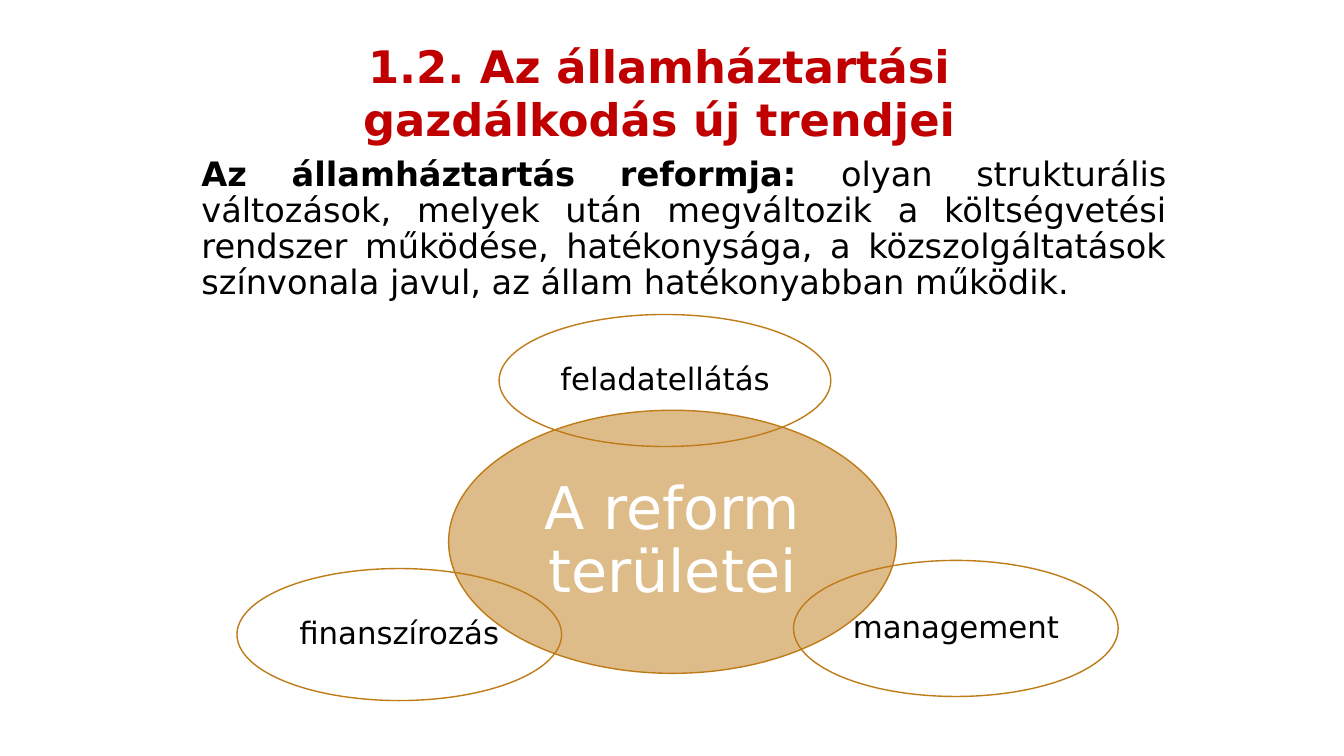
from lxml import etree
from pptx import Presentation
from pptx.dml.color import RGBColor
from pptx.enum.shapes import MSO_SHAPE
from pptx.enum.text import MSO_ANCHOR, MSO_AUTO_SIZE, PP_ALIGN
from pptx.oxml.ns import qn
from pptx.util import Inches, Pt

OVAL = MSO_SHAPE.OVAL
TOP, MIDDLE = MSO_ANCHOR.TOP, MSO_ANCHOR.MIDDLE
CENTER, JUSTIFY = PP_ALIGN.CENTER, PP_ALIGN.JUSTIFY
FIXED = MSO_AUTO_SIZE.NONE

TITLE = "1.2. Az államháztartási gazdálkodás új trendjei"
TERM = "Az államháztartás reformja: "
MEANING = (
    "olyan strukturális változások, melyek után megváltozik a költségvetési "
    "rendszer működése, hatékonysága, a közszolgáltatások színvonala javul, "
    "az állam hatékonyabban működik."
)
HUB = ("A reform területei", (4.45, 4.07, 4.44, 2.61))
AREAS = [
    ("feladatellátás", (4.95, 3.12, 3.29, 1.31)),
    ("management", (7.87, 5.56, 3.22, 1.35)),
    ("finanszírozás", (2.35, 5.64, 3.22, 1.31)),
]
TITLE_BOX = (2.92, 0.33, 7.24, 1.18)
BODY_BOX = (1.9, 1.51, 9.77, 1.46)

THEME = {
    "font": "DejaVu Sans",
    "red": RGBColor(0xC0, 0x00, 0x00),
    "gold": RGBColor(0xBF, 0x7B, 0x17),
    "black": RGBColor(0x00, 0x00, 0x00),
    "white": RGBColor(0xFF, 0xFF, 0xFF),
    "title": Pt(32),
    "body": Pt(24),
    "hub": Pt(42),
    "area": Pt(22),
}


def place(box):
    return [Inches(n) for n in box]


def write(shape, runs, size, color, frame, para):
    """Fill a shape with one paragraph of (text, bold) runs."""
    text = shape.text_frame
    for key, val in {"word_wrap": True, "auto_size": FIXED, **frame}.items():
        setattr(text, key, val)
    line = text.paragraphs[0]
    for key, val in {"space_before": Pt(0), **para}.items():
        setattr(line, key, val)
    for words, bold in runs:
        run = line.add_run()
        run.text = words
        look = {"name": THEME["font"], "size": THEME[size], "bold": bold}
        for key, val in look.items():
            setattr(run.font, key, val)
        run.font.color.rgb = THEME[color]


def add_oval(slide, label, box, size, color, inset):
    oval = slide.shapes.add_shape(OVAL, *place(box))
    oval.shadow.inherit = False
    oval.fill.background()
    oval.line.color.rgb = THEME["gold"]
    oval.line.width = Pt(1)
    sides = ("left", "right", "top", "bottom")
    frame = {f"margin_{side}": Inches(inset) for side in sides}
    frame["vertical_anchor"] = MIDDLE
    para = {"alignment": CENTER, "line_spacing": 0.9}
    write(oval, [(label, False)], size, color, frame, para)
    return oval


def tint(shape, color, share):
    """Give a shape a fill of the given opacity in percent."""
    shape.fill.solid()
    shape.fill.fore_color.rgb = color
    tone = shape.fill._xPr.find(qn("a:solidFill"))[0]
    etree.SubElement(tone, qn("a:alpha")).set("val", str(share * 1000))


def main():
    deck = Presentation()
    deck.slide_width, deck.slide_height = Inches(13.33), Inches(7.5)
    slide = deck.slides.add_slide(deck.slide_layouts[5])

    title = slide.shapes.title
    title.left, title.top, title.width, title.height = place(TITLE_BOX)
    write(title, [(TITLE, True)], "title", "red", {"vertical_anchor": TOP},
          {"alignment": CENTER, "line_spacing": 1.0})

    body = slide.shapes.add_textbox(*place(BODY_BOX))
    write(body, [(TERM, True), (MEANING, False)], "body", "black",
          {"vertical_anchor": TOP},
          {"alignment": JUSTIFY, "line_spacing": 0.9})

    hub = add_oval(slide, *HUB, "hub", "white", 0.06)
    tint(hub, THEME["gold"], 50)
    for label, box in AREAS:
        add_oval(slide, label, box, "area", "black", 0.03)

    deck.save("out.pptx")


if __name__ == "__main__":
    main()
